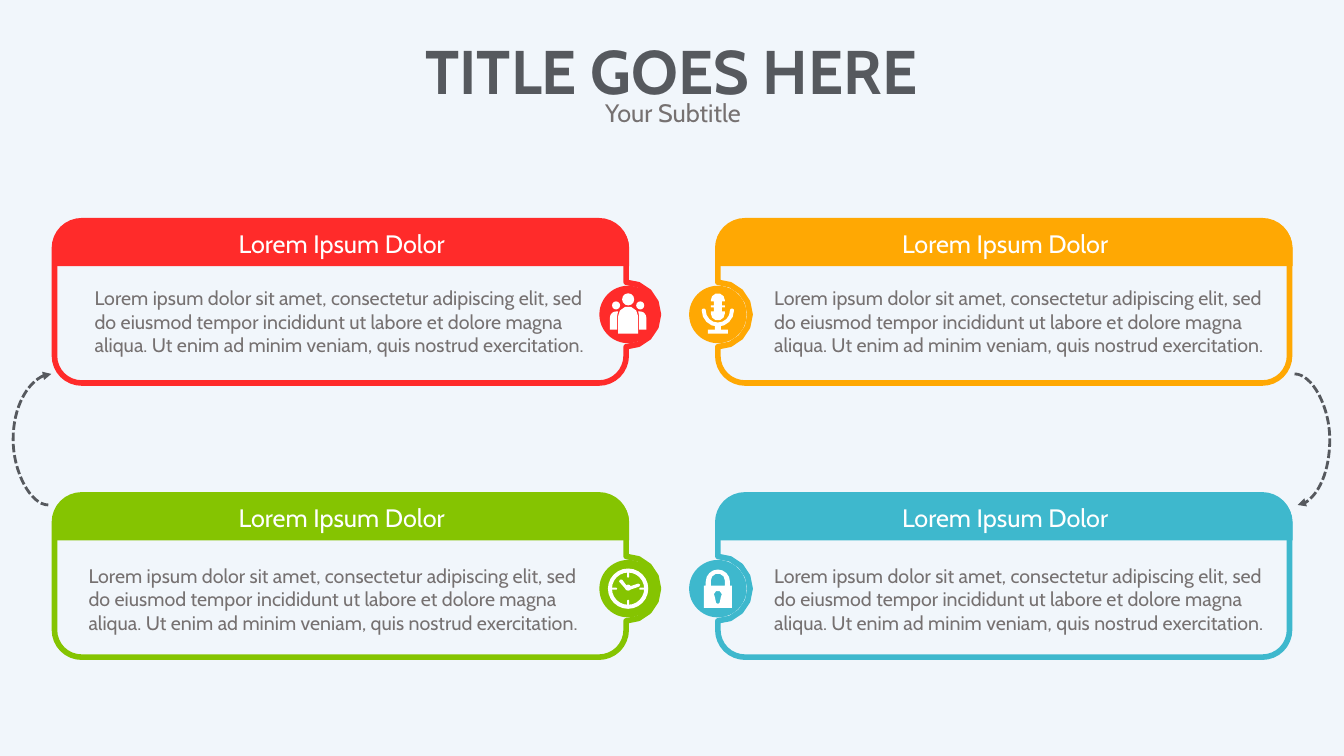
from math import cos, radians, sin

from lxml import etree
from pptx import Presentation
from pptx.dml.color import RGBColor
from pptx.enum.dml import MSO_LINE
from pptx.enum.shapes import MSO_CONNECTOR, MSO_SHAPE
from pptx.enum.text import MSO_ANCHOR, PP_ALIGN
from pptx.oxml.ns import qn
from pptx.util import Inches, Pt

OVAL, RECT = MSO_SHAPE.OVAL, MSO_SHAPE.RECTANGLE
ROUNDED, DONUT = MSO_SHAPE.ROUNDED_RECTANGLE, MSO_SHAPE.DONUT
CENTER, LEFT = PP_ALIGN.CENTER, PP_ALIGN.LEFT
MIDDLE = MSO_ANCHOR.MIDDLE
CURVE, DASH = MSO_CONNECTOR.CURVE, MSO_LINE.SQUARE_DOT

FONT = "Cabin"
BACKGROUND, DARK, GREY, WHITE = "F1F6FB", "56595E", "767171", "FFFFFF"
TITLE, SUBTITLE = "TITLE GOES HERE", "Your Subtitle"
HEADING = "Lorem Ipsum Dolor"
BODY = ("Lorem ipsum dolor sit amet, consectetur adipiscing elit, sed do eiusmod "
        "tempor incididunt ut labore et dolore magna aliqua. Ut enim ad minim veniam, "
        "quis nostrud exercitation.")

CARDS = [
    {"column": 0, "row": 0, "color": "FF2B2A", "icon": "people", "text": (0.84, 2.79, 5.1)},
    {"column": 1, "row": 0, "color": "FFA803", "icon": "microphone", "text": (7.58, 2.79, 5.21)},
    {"column": 0, "row": 1, "color": "85C401", "icon": "clock", "text": (0.78, 5.54, 5.1)},
    {"column": 1, "row": 1, "color": "3EB8CD", "icon": "lock", "text": (7.58, 5.54, 5.21)},
]
ARROWS = [
    {"start": 12.84, "end": 12.87, "reach": 0.35, "tip": "tailEnd"},
    {"start": 0.51, "end": 0.48, "reach": 0.38, "tip": "headEnd"},
]
ARROW_TOP, ARROW_BOTTOM = 3.71, 5.01
CARD_LEFT, CARD_TOP = (0.54, 7.12), (2.19, 4.91)
HEADER_WIDTH, HEADER_HEIGHT = 5.7, 0.45
FRAME_WIDTH, FRAME_HEIGHT, CORNER = 5.67, 1.61, 0.27
BADGE_X, BADGE_DROP, BADGE_SIZE, BUMP = (6.23, 7.12), 0.93, 0.57, 0.32

deck = Presentation()
deck.slide_width, deck.slide_height = Inches(13.33), Inches(7.5)
page = deck.slides.add_slide(deck.slide_layouts[6])


def rgb(color):
    return RGBColor.from_string(color)


page.background.fill.solid()
page.background.fill.fore_color.rgb = rgb(BACKGROUND)


def paint(shape, fill=None, line=None):
    shape.shadow.inherit = False
    if fill:
        shape.fill.solid()
        shape.fill.fore_color.rgb = rgb(fill)
    else:
        shape.fill.background()
    if line:
        shape.line.color.rgb = rgb(line)
        shape.line.width = Pt(4)
    else:
        shape.line.fill.background()
    return shape


def centered(kind, x, y, width, height, fill=WHITE):
    shape = page.shapes.add_shape(kind, Inches(x - width / 2), Inches(y - height / 2),
                                  Inches(width), Inches(height))
    return paint(shape, fill)


def arc(x, y, radius, start, end):
    steps = 8 if radius > 0.1 else 5
    angles = [radians(start + (end - start) * step / steps) for step in range(steps + 1)]
    return [(x + radius * cos(angle), y + radius * sin(angle)) for angle in angles]


def outline(loops, fill=None, line=None, x=0, y=0):
    loops = [[(Inches(x + px), Inches(y + py)) for px, py in loop] for loop in loops]
    builder = page.shapes.build_freeform(*loops[0][0])
    for index, loop in enumerate(loops):
        if index:
            builder.move_to(*loop[0])
        builder.add_line_segments(loop[1:], close=True)
    return paint(builder.convert_to_shape(), fill, line)


def write(frame, text, size, color, align=LEFT, bold=False):
    frame.word_wrap = True
    para = frame.paragraphs[0]
    para.alignment = align
    span = para.add_run()
    span.text = text
    span.font.name, span.font.size, span.font.bold = FONT, Pt(size), bold
    span.font.color.rgb = rgb(color)


def text_box(x, y, width, height, *style):
    box = page.shapes.add_textbox(Inches(x), Inches(y), Inches(width), Inches(height))
    write(box.text_frame, *style)


def top_corners(x, y, width):
    return (arc(x + CORNER, y + CORNER, CORNER, 180, 270)
            + arc(x + width - CORNER, y + CORNER, CORNER, 270, 360))


def draw_frame(x, y, column, color):
    right, bottom = x + FRAME_WIDTH, y + FRAME_HEIGHT
    points = top_corners(x, y, FRAME_WIDTH)
    if column == 0:
        points += arc(right, y + BADGE_DROP, BUMP, -90, 90)
    points += arc(right - CORNER, bottom - CORNER, CORNER, 0, 90)
    points += arc(x + CORNER, bottom - CORNER, CORNER, 90, 180)
    if column == 1:
        points += arc(x, y + BADGE_DROP, BUMP, 90, -90)
    outline([points], line=color)


def draw_people(x, y):
    centered(OVAL, x, y - 0.15, 0.12, 0.12)
    outline([arc(0, 0.02, 0.1, 180, 360) + [(0.1, 0.19), (-0.1, 0.19)]], WHITE, x=x, y=y)
    for side in (-1, 1):
        centered(OVAL, x + side * 0.12, y - 0.09, 0.08, 0.08)
        shoulder = [(0.11, 0.15), (0.11, 0.02), (0.1, -0.03)]
        shoulder += arc(0.12, 0.03, 0.06, 270, 360) + [(0.18, 0.15)]
        outline([[(side * px, py) for px, py in shoulder]], WHITE, x=x, y=y)


def draw_microphone(x, y):
    notches = [(0.07, -0.13), (0.04, -0.13), (0.04, -0.09), (0.07, -0.09),
               (0.07, -0.07), (0.04, -0.07), (0.04, -0.03), (0.07, -0.03)]
    mirrored = [(-px, py) for px, py in reversed(notches)]
    capsule = arc(0, -0.14, 0.07, 180, 360) + notches + arc(0, -0.01, 0.07, 0, 180) + mirrored
    outline([capsule], WHITE, x=x, y=y)
    cradle = (arc(0, -0.04, 0.16, 0, 180) + arc(-0.14, -0.04, 0.02, 180, 360)
              + arc(0, -0.04, 0.12, 180, 0) + arc(0.14, -0.04, 0.02, 180, 360))
    outline([cradle], WHITE, x=x, y=y)
    centered(RECT, x, y + 0.13, 0.06, 0.05)
    centered(RECT, x, y + 0.17, 0.2, 0.04)


def draw_clock(x, y):
    centered(DONUT, x, y, 0.4, 0.4).adjustments[0] = 0.1
    centered(OVAL, x, y - 0.01, 0.06, 0.06)
    outline([[(0, -0.01), (-0.02, 0.01), (-0.09, -0.07), (-0.08, -0.09), (-0.06, -0.09)],
             [(0.02, 0.01), (0.01, -0.02), (0.1, -0.05), (0.12, -0.04), (0.11, -0.02)]],
            WHITE, x=x, y=y)
    for side in (-1, 1):
        centered(ROUNDED, x, y + side * 0.15, 0.02, 0.08).adjustments[0] = 0.5
        centered(ROUNDED, x + side * 0.15, y, 0.08, 0.02).adjustments[0] = 0.5


def draw_lock(x, y):
    case = (arc(0, -0.07, 0.12, 180, 360)
            + [(0.12, -0.03), (0.14, -0.03), (0.14, 0.19),
               (-0.14, 0.19), (-0.14, -0.03), (-0.12, -0.03)])
    shackle = arc(0, -0.08, 0.07, 180, 360) + [(0.07, -0.03), (-0.07, -0.03)]
    keyhole = arc(0, 0.06, 0.04, 135, 405) + arc(0, 0.13, 0.02, 0, 180)
    outline([case, shackle, keyhole], WHITE, x=x, y=y)


def draw_arrow(start, end, reach, tip):
    arrow = page.shapes.add_connector(CURVE, Inches(start), Inches(ARROW_TOP),
                                      Inches(end), Inches(ARROW_BOTTOM))
    arrow.line.color.rgb = rgb(DARK)
    arrow.line.width = Pt(2)
    arrow.line.dash_style = DASH
    properties = arrow._element.spPr
    etree.SubElement(properties.find(qn("a:ln")), qn("a:" + tip), type="triangle")
    etree.SubElement(properties, qn("a:effectLst"))
    bend = round(reach / abs(end - start) * 100000)
    etree.SubElement(properties.find(".//" + qn("a:avLst")), qn("a:gd"),
                     name="adj1", fmla=f"val {bend}")


ICONS = {"people": draw_people, "microphone": draw_microphone,
         "clock": draw_clock, "lock": draw_lock}

text_box(3.65, 0.28, 6.02, 0.84, TITLE, 44, DARK, CENTER, True)
text_box(4.41, 0.92, 4.53, 0.4, SUBTITLE, 18, GREY, CENTER)

for card in CARDS:
    column, color = card["column"], card["color"]
    x, y = CARD_LEFT[column], CARD_TOP[card["row"]]
    badge_x, badge_y = BADGE_X[column], y + BADGE_DROP
    centered(OVAL, badge_x, badge_y, BADGE_SIZE, BADGE_SIZE, color)
    draw_frame(x, y, column, color)
    bottom = y + HEADER_HEIGHT
    header = outline([top_corners(x, y, HEADER_WIDTH) + [(x + HEADER_WIDTH, bottom), (x, bottom)]],
                     color)
    header.text_frame.vertical_anchor = MIDDLE
    write(header.text_frame, HEADING, 18, WHITE, CENTER)
    text_box(*card["text"], 1.11, BODY, 14, GREY)
    ICONS[card["icon"]](badge_x, badge_y)

for arrow in ARROWS:
    draw_arrow(**arrow)

deck.save("out.pptx")
